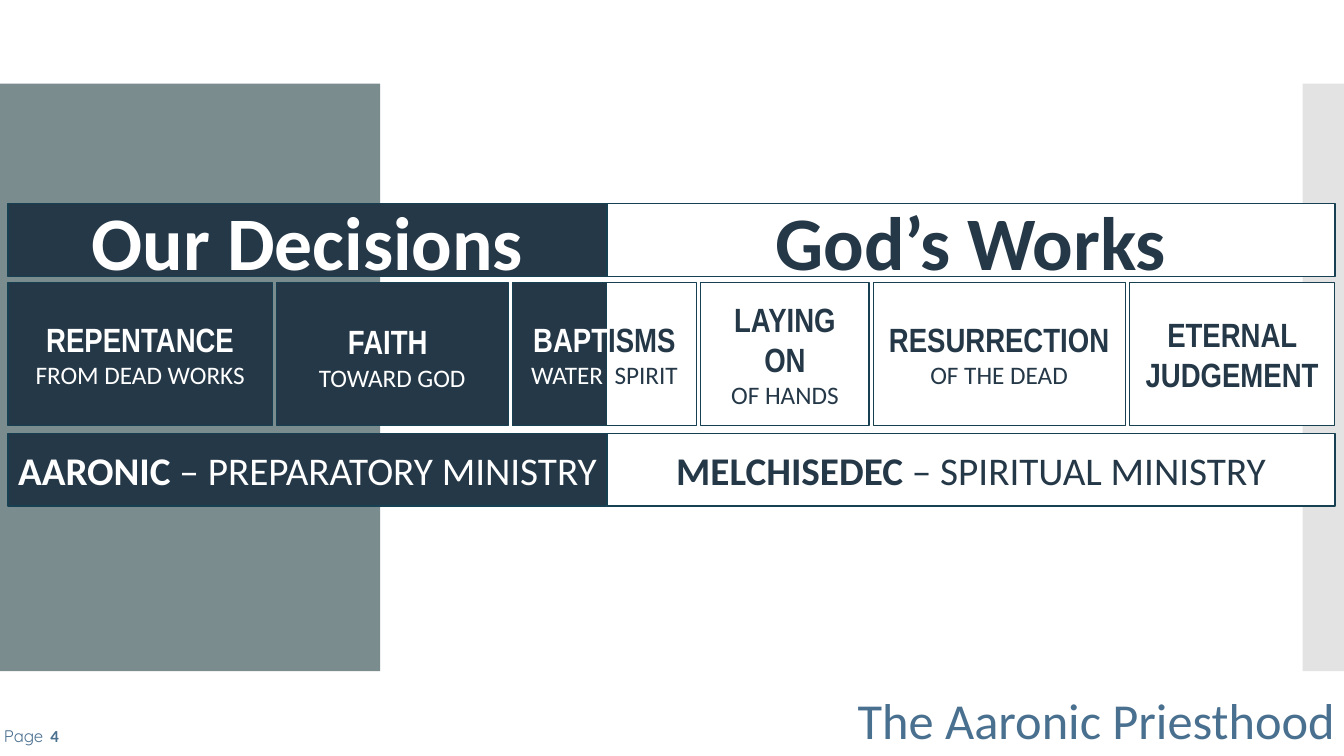
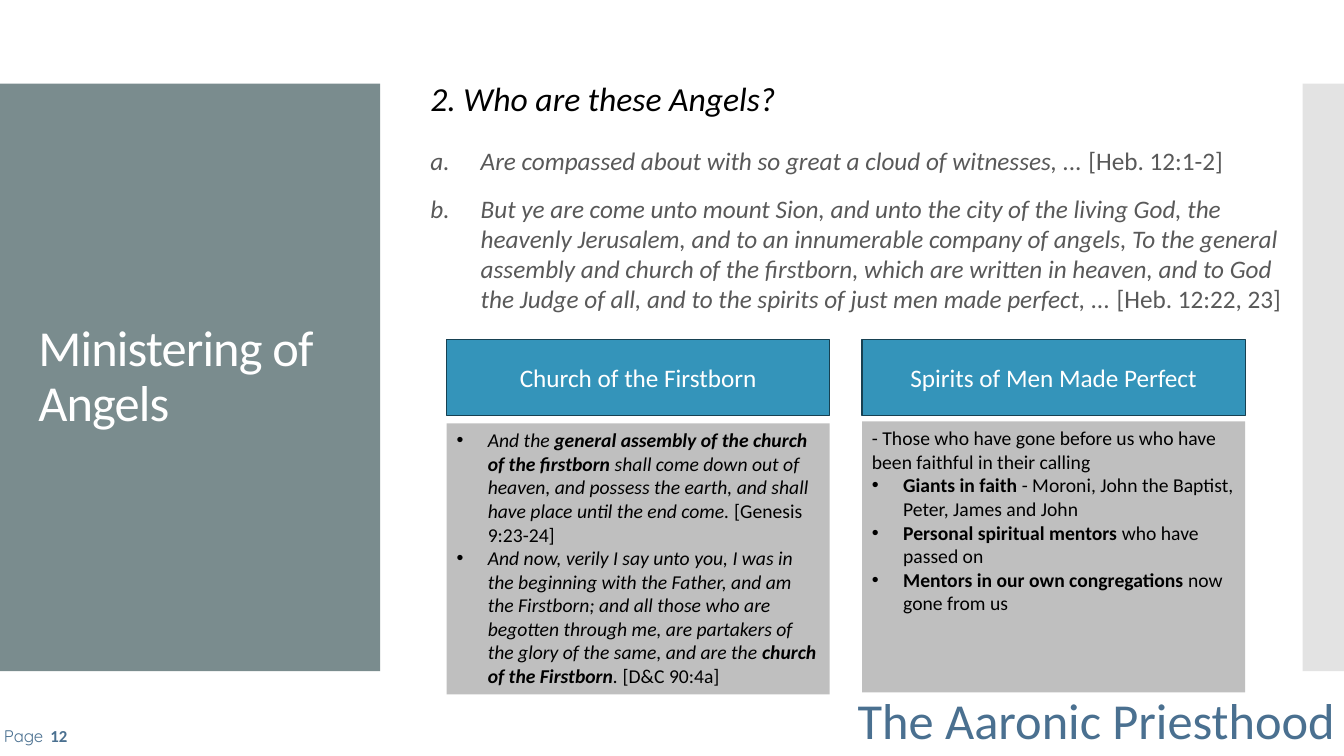
from dataclasses import dataclass
from typing import Optional

from lxml.etree import SubElement
from pptx import Presentation
from pptx.dml.color import RGBColor
from pptx.enum.shapes import MSO_SHAPE
from pptx.enum.text import MSO_ANCHOR, PP_ALIGN
from pptx.oxml.ns import qn
from pptx.util import Inches, Pt


@dataclass(frozen=True)
class Theme:
    sage: str = "7A8C8E"
    mist: str = "C8C8C8"
    steel: str = "4A7090"
    navy: str = "253848"
    edge: str = "174152"
    blue: str = "3494BA"
    panel: str = "BFBFBF"
    body: str = "595959"
    white: str = "FFFFFF"
    black: str = "000000"
    font: str = "Calibri"
    narrow: str = "Arial Narrow"
    light: str = "Quicksand"
    banner: int = 54
    title: int = 36
    strip: int = 28
    head: int = 24
    text: int = 18
    note: int = 14
    foot: int = 12


@dataclass(frozen=True)
class Run:
    """Text with only what differs from the format of its block."""
    text: str
    size: Optional[int] = None
    font: Optional[str] = None
    color: Optional[str] = None
    bold: Optional[bool] = None
    italic: Optional[bool] = None
    space: Optional[int] = None


@dataclass(frozen=True)
class Para:
    runs: tuple
    mark: str = ""
    indent: float = 0.31
    lines: Optional[float] = None
    before: int = 0


@dataclass(frozen=True)
class Cell:
    width: float
    paras: tuple
    fill: Optional[str] = None
    color: str = Theme.navy


@dataclass(frozen=True)
class Half:
    left: float
    width: float
    fill: str
    color: str
    banner: str
    order: str
    work: str


@dataclass(frozen=True)
class Card:
    left: float
    top: float
    head: str
    paras: tuple


T = Theme()


def first(value, default):
    return default if value is None else value


def set_mark(para, mark: str, indent: float) -> None:
    """Give a paragraph a hanging bullet or letter."""
    props = para._p.get_or_add_pPr()
    props.set("marL", str(Inches(indent)))
    props.set("indent", str(-Inches(indent)))
    if mark == "a.":
        SubElement(props, qn("a:buAutoNum"), type="alphaLcPeriod")
    else:
        SubElement(props, qn("a:buFont"), typeface="Arial")
        SubElement(props, qn("a:buChar"), char=mark)


def write(shape, paras, *, size=T.text, color=T.black, font=T.font, bold=False,
          italic=False, align=PP_ALIGN.LEFT, anchor=MSO_ANCHOR.TOP, wrap=True):
    """Fill a shape with a string or a sequence of Para."""
    frame = shape.text_frame
    frame.word_wrap = wrap
    frame.vertical_anchor = anchor
    if isinstance(paras, str):
        paras = (Para((Run(paras),)),)
    for i, item in enumerate(paras):
        para = frame.add_paragraph() if i else frame.paragraphs[0]
        para.alignment = align
        para.space_before = Pt(item.before)
        if item.lines:
            para.line_spacing = item.lines
        if item.mark:
            set_mark(para, item.mark, item.indent)
        for part in item.runs:
            run = para.add_run()
            run.text = part.text
            run.font.size = Pt(first(part.size, size))
            run.font.name = first(part.font, font)
            run.font.bold = first(part.bold, bold)
            run.font.italic = first(part.italic, italic)
            run.font.color.rgb = RGBColor.from_string(first(part.color, color))
            if part.space is not None:
                run.font._element.set("spc", str(part.space))
    return shape


def place(left: float, top: float, width: float, height: float) -> tuple:
    return tuple(Inches(n) for n in (left, top, width, height))


def add_box(shapes, at: tuple, fill=None, edge=None, alpha=None):
    box = shapes.add_shape(MSO_SHAPE.RECTANGLE, *place(*at))
    box.shadow.inherit = False
    if fill:
        box.fill.solid()
        box.fill.fore_color.rgb = RGBColor.from_string(fill)
        if alpha:
            tint = box.fill._xPr.find(".//" + qn("a:srgbClr"))
            SubElement(tint, qn("a:alpha"), val=str(alpha * 1000))
    else:
        box.fill.background()
    if edge:
        box.line.color.rgb = RGBColor.from_string(edge)
        box.line.width = Pt(0.85)
    else:
        box.line.fill.background()
    return box


def add_text(shapes, at: tuple, paras, **form):
    return write(shapes.add_textbox(*place(*at)), paras, **form)


def add_label(shapes, at: tuple, paras, fill, **form):
    """Draw an edged box with text in its middle."""
    return write(add_box(shapes, at, fill, T.edge), paras,
                 align=PP_ALIGN.CENTER, anchor=MSO_ANCHOR.MIDDLE, **form)


def add_frame(shapes, page: int) -> None:
    """Draw the side bands and the footer that all slides share."""
    add_box(shapes, (0, 0.83, 3.77, 5.83), T.sage)
    add_box(shapes, (12.92, 0.83, 0.42, 5.83), T.mist, alpha=50)
    add_text(shapes, (6.6, 6.79, 6.74, 0.71), "The Aaronic Priesthood",
             size=T.title, color=T.steel, align=PP_ALIGN.RIGHT)
    add_text(shapes, (-0.06, 7.15, 0.64, 0.3), "Page", size=T.foot,
             color=T.steel, font=T.light, wrap=False)
    add_text(shapes, (0.4, 7.12, 0.65, 0.35), str(page), size=T.foot,
             color=T.steel, bold=True, anchor=MSO_ANCHOR.MIDDLE)


def head(text: str, color=None) -> Run:
    return Run(text, T.head, T.narrow, color, True)


def lines(*rows) -> tuple:
    """Make one paragraph of each row of runs."""
    return tuple(Para(row) for row in rows)


LEFT, SPLIT, RIGHT, GAP = 0.08, 6.02, 13.24, 0.04
HALVES = (
    Half(LEFT, SPLIT - LEFT, T.navy, T.white, "Our Decisions",
         "AARONIC", " – PREPARATORY MINISTRY"),
    Half(SPLIT, RIGHT - SPLIT, T.white, T.navy, "God’s Works",
         "MELCHISEDEC", " – SPIRITUAL MINISTRY"),
)
BAPTISMS = Cell(1.83, lines(
    (head("BAPT", T.white), head("ISMS")),
    (Run("WATER", color=T.white), Run(" ", space=400), Run("SPIRIT"))))
CELLS = (
    Cell(2.62, lines((head("REPENTANCE"),), (Run("FROM DEAD WORKS"),)),
         T.navy, T.white),
    Cell(2.3, lines((head("FAITH"), Run(" ", T.strip)), (Run("TOWARD GOD"),)),
         T.navy, T.white),
    BAPTISMS,
    Cell(1.67, lines((head("LAYING ON"),), (Run("OF HANDS"),))),
    Cell(2.5, lines((head("RESURRECTION"), Run(" OF THE DEAD")))),
    Cell(2.04, lines((head("ETERNAL JUDGEMENT"),)), T.white),
)


def draw_works(deck) -> None:
    shapes = deck.slides.add_slide(deck.slide_layouts[6]).shapes
    add_frame(shapes, 4)
    for half in HALVES:
        add_label(shapes, (half.left, 2.02, half.width, 0.72), half.banner,
                  half.fill, size=T.banner, color=half.color, bold=True)
        order = lines((Run(half.order, bold=True), Run(half.work)))
        add_label(shapes, (half.left, 4.3, half.width, 0.72), order,
                  half.fill, size=T.strip, color=half.color)
    left, top, high = LEFT, 2.8, 1.42
    for cell in CELLS:
        layer = shapes
        if cell is BAPTISMS:
            layer = shapes.add_group_shape().shapes
            add_box(layer, (left, top, SPLIT - left, high), T.navy, T.edge)
        add_label(layer, (left, top, cell.width, high), cell.paras,
                  cell.fill, color=cell.color)
        left += cell.width + GAP


VERSES = (
    Para((Run("Are compassed about with so great a cloud of witnesses, ... "),
          Run("[Heb. 12:1-2]", italic=False)), "a.", 0.5, 0.9),
    Para((Run("But ye are come unto mount Sion, and unto the city of the living "
              "God, the heavenly Jerusalem, and to an innumerable company of "
              "angels, To the general assembly and church of the firstborn, "
              "which are written in heaven, and to God the Judge of all, and to "
              "the spirits of just men made perfect, ... "),
          Run("[Heb. 12:22, 23]", italic=False)), "a.", 0.5, before=12),
)
CARDS = (
    Card(4.43, 4.2, "Church of the Firstborn", (
        Para((Run("And the ", italic=True),
              Run("general assembly of the church of the firstborn ",
                  bold=True, italic=True),
              Run("shall come down out of heaven, and possess the earth, and "
                  "shall have place until the end come. ", italic=True),
              Run("[Genesis 9:23-24]")), "•"),
        Para((Run("And now, verily I say unto you, I was in the beginning with "
                  "the Father, and am the Firstborn; and all those who are "
                  "begotten through me, are partakers of the glory of the same, "
                  "and are the ", italic=True),
              Run("church of the Firstborn", bold=True, italic=True),
              Run(". ", italic=True), Run("[D&C 90:4a]")), "•"))),
    Card(8.55, 4.18, "Spirits of Men Made Perfect", (
        Para((Run("- Those who have gone before us who have been faithful in "
                  "their calling"),)),
        Para((Run("Giants in faith ", bold=True),
              Run("- Moroni, John the Baptist, Peter, James and John")), "•"),
        Para((Run("Personal spiritual mentors ", bold=True),
              Run("who have passed on")), "•"),
        Para((Run("Mentors in our own congregations ", bold=True),
              Run("now gone from us")), "•"))),
)


def draw_angels(deck) -> None:
    shapes = deck.slides.add_slide(deck.slide_layouts[5]).shapes
    add_frame(shapes, 12)
    add_text(shapes, (4.17, 1.08, 8.77, 2.43), VERSES, color=T.body,
             italic=True, anchor=MSO_ANCHOR.MIDDLE)
    add_text(shapes, (4.17, 0.72, 7.79, 0.5), "2. Who are these Angels?",
             size=T.head, italic=True)
    title = shapes.title
    title.left, title.top, title.width, title.height = place(0.28, 1.23, 3.22, 5.03)
    name = Para((Run("Ministering of Angels", space=-60),), lines=0.9)
    write(title, (name,), size=T.title, color=T.white, anchor=MSO_ANCHOR.MIDDLE)
    title.element.getparent().append(title.element)  # lift above the side band
    for card in CARDS:
        add_label(shapes, (card.left, 3.37, 3.8, 0.75), card.head, T.blue,
                  color=T.white)
        panel = add_box(shapes, (card.left, card.top, 3.8, 2.69), T.panel)
        write(panel, card.paras, size=T.note)


def main() -> None:
    deck = Presentation()
    deck.slide_width, deck.slide_height = Inches(13.33), Inches(7.5)
    draw_works(deck)
    draw_angels(deck)
    deck.save("out.pptx")


if __name__ == "__main__":
    main()
